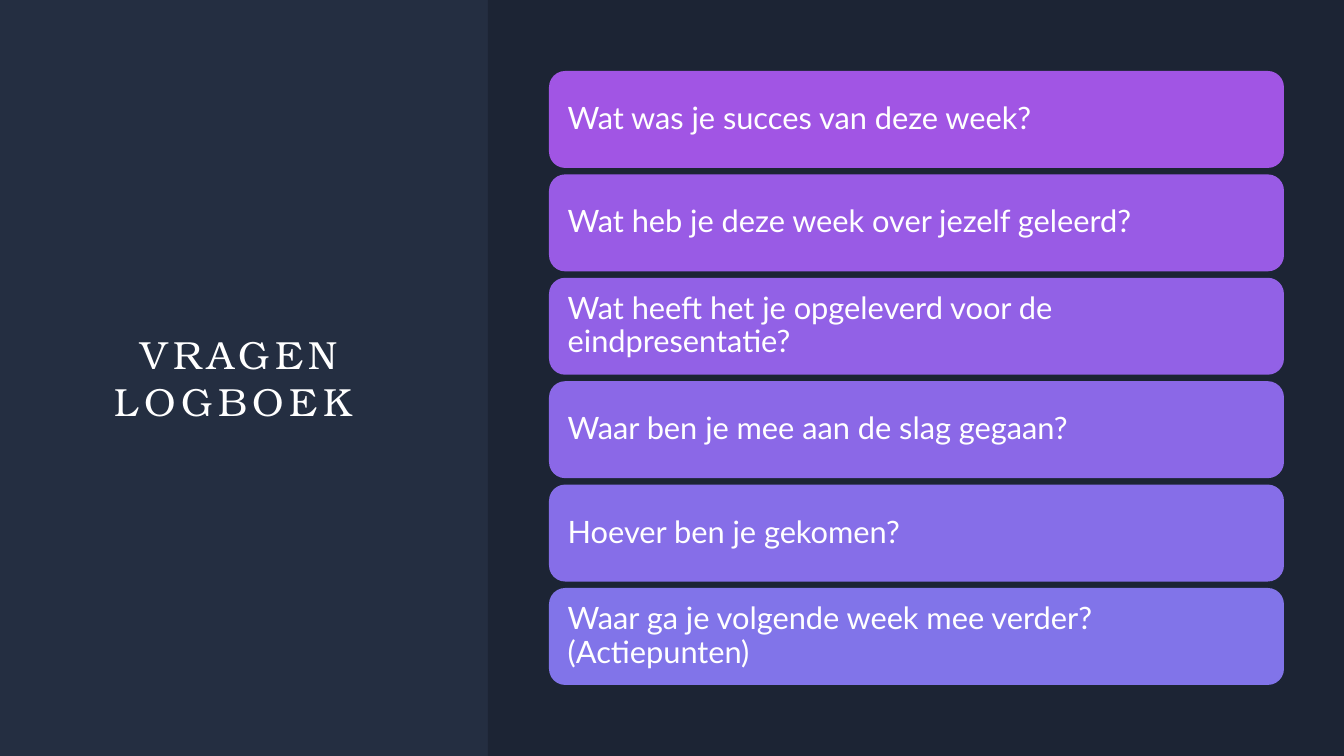
import pptx
import pptx.dml.color
import pptx.enum.shapes
import pptx.enum.text
import pptx.oxml
import pptx.oxml.ns
import pptx.util

TITLE = "VRAGEN LOGBOEK "
QUESTIONS = [
    ("Wat was je succes van deze week?", "A155E4"),
    ("Wat heb je deze week over jezelf geleerd?", "995BE5"),
    ("Wat heeft het je opgeleverd voor de eindpresentatie?", "9261E6"),
    ("Waar ben je mee aan de slag gegaan?", "8B68E7"),
    ("Hoever ben je gekomen?", "866EE8"),
    ("Waar ga je volgende week mee verder? (Actiepunten)", "8174E9"),
]
BACKGROUND, PANEL, WHITE = "242E41", "000000", "FFFFFF"
SLIDE_WIDTH, SLIDE_HEIGHT = 1344, 756
TITLE_BOX = (59, 119, 366, 517)
PANEL_LEFT = 488
CARD_LEFT, CARD_WIDTH, CARD_HEIGHT = 549, 735, 97
FIRST_TOP, LAST_TOP = 71, 588
CARD_INSET = 14
EMU_PER_PX = 12192000 / SLIDE_WIDTH


def px(length):
    return pptx.util.Emu(round(length * EMU_PER_PX))


def paint(fill, color):
    fill.solid()
    fill.fore_color.rgb = pptx.dml.color.RGBColor.from_string(color)


def add_box(slide, preset, box, color):
    shape = slide.shapes.add_shape(preset, *map(px, box))
    shape.shadow.inherit = False
    shape.line.fill.background()
    paint(shape.fill, color)
    return shape


def write(shape, text, font_name, size, alignment, inset):
    frame = shape.text_frame
    frame.word_wrap = True
    frame.vertical_anchor = pptx.enum.text.MSO_ANCHOR.MIDDLE
    frame.margin_left = frame.margin_right = px(inset)
    frame.margin_top = frame.margin_bottom = px(inset)
    paragraph = frame.paragraphs[0]
    paragraph.alignment = alignment
    run = paragraph.add_run()
    run.text = text
    run.font.name = font_name
    run.font.size = pptx.util.Pt(size)
    paint(run.font.fill, WHITE)
    return paragraph, run


def main():
    presentation = pptx.Presentation()
    presentation.slide_width = px(SLIDE_WIDTH)
    presentation.slide_height = px(SLIDE_HEIGHT)
    slide = presentation.slides.add_slide(presentation.slide_layouts[6])
    paint(slide.background.fill, BACKGROUND)
    presets = pptx.enum.shapes.MSO_SHAPE
    alignments = pptx.enum.text.PP_ALIGN

    title = slide.shapes.add_textbox(*map(px, TITLE_BOX))
    paragraph, run = write(title, TITLE, "TeX Gyre Bonum", 28, alignments.CENTER, 0)
    run.font.element.set("spc", "400") if hasattr(run.font, "element") else run._r.get_or_add_rPr().set("spc", "400")

    panel_box = (PANEL_LEFT, 0, SLIDE_WIDTH - PANEL_LEFT, SLIDE_HEIGHT)
    panel = add_box(slide, presets.RECTANGLE, panel_box, PANEL)
    panel_color = panel.element.spPr.find(".//" + pptx.oxml.ns.qn("a:srgbClr"))
    alpha = pptx.oxml.parse_xml(f'<a:alpha {pptx.oxml.ns.nsdecls("a")} val="20000"/>')
    panel_color.append(alpha)

    pitch = (LAST_TOP - FIRST_TOP) / (len(QUESTIONS) - 1)
    for index, (question, color) in enumerate(QUESTIONS):
        card_box = (CARD_LEFT, FIRST_TOP + index * pitch, CARD_WIDTH, CARD_HEIGHT)
        card = add_box(slide, presets.ROUNDED_RECTANGLE, card_box, color)
        paragraph, run = write(card, question, "Lato", 22, alignments.LEFT, CARD_INSET)
        paragraph.line_spacing = 0.9

    presentation.save("out.pptx")


if __name__ == "__main__":
    main()
